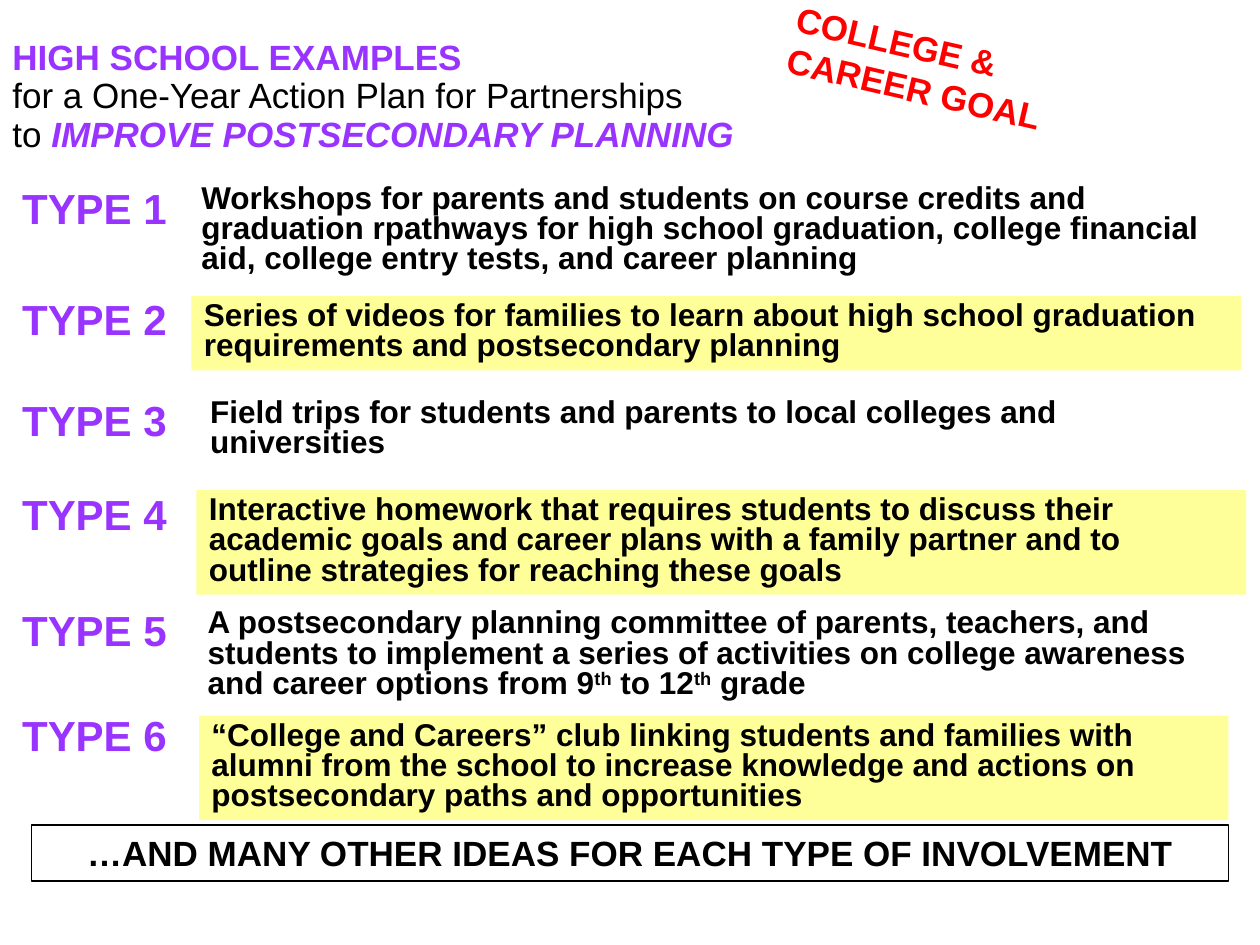
from dataclasses import dataclass
from typing import NamedTuple

from pptx import Presentation
from pptx.dml.color import RGBColor as RGB
from pptx.enum.shapes import MSO_SHAPE as Shape
from pptx.enum.text import MSO_ANCHOR as Anchor, PP_ALIGN as Align
from pptx.util import Inches, Pt


@dataclass(frozen=True)
class Theme:
    face: str = "Arial"
    ink: RGB = RGB(0, 0, 0)
    violet: RGB = RGB(0x99, 0x33, 0xFF)
    red: RGB = RGB(0xFF, 0, 0)
    yellow: RGB = RGB(0xFF, 0xFF, 0x99)
    head: int = 20
    label: int = 24
    body: int = 18


class Run(NamedTuple):
    text: str
    color: RGB
    bold: bool = True
    italic: bool = False
    raised: bool = False


class Box(NamedTuple):
    left: float
    top: float
    width: float
    height: float


class Row(NamedTuple):
    label_top: float
    box: Box
    marked: bool
    lines: list


THEME = Theme()
LEFT, CENTER = Align.LEFT, Align.CENTER


def ink(text: str, raised: bool = False) -> Run:
    return Run(text, THEME.ink, raised=raised)


TITLE = [
    [Run("HIGH SCHOOL EXAMPLES", THEME.violet)],
    [Run("for a One-Year Action Plan for Partnerships", THEME.ink, False)],
    [Run("to ", THEME.ink, False),
     Run("IMPROVE POSTSECONDARY PLANNING", THEME.violet, italic=True)],
]

ROWS = [
    Row(1.4, Box(1.5, 1.42, 8.33, 0.83), False, [[ink(
        "Workshops for parents and students on course credits and "
        "graduation rpathways for high school graduation, college "
        "financial aid, college entry tests, and career planning")]]),
    Row(2.28, Box(1.52, 2.35, 8.33, 0.59), True, [[ink(
        "Series of videos for families to learn about high school "
        "graduation requirements and postsecondary planning")]]),
    Row(3.08, Box(1.57, 3.12, 8.33, 0.59), False, [[ink(
        "Field trips for students and parents to local colleges and "
        "universities")]]),
    Row(3.83, Box(1.56, 3.89, 8.33, 0.83), True, [
        [ink("Interactive homework that requires students to discuss their "
             "academic goals and career plans with a family partner and to")],
        [ink("outline strategies for reaching these goals")]]),
    Row(4.75, Box(1.55, 4.79, 8.5, 0.83), False, [
        [ink("A postsecondary planning committee of parents, teachers, and "
             "students to implement a series of activities on college "
             "awareness")],
        [ink("and career options from 9"), ink("th", True),
         ink(" to 12"), ink("th", True), ink(" grade")]]),
    Row(5.58, Box(1.58, 5.68, 8.17, 0.83), True, [[ink(
        "“College and Careers” club linking students and families with "
        "alumni from the school to increase knowledge and actions on "
        "postsecondary paths and opportunities")]]),
]


def fill_text(shape, lines: list, size: int, align=LEFT, space=1.0) -> None:
    frame = shape.text_frame
    frame.word_wrap = True
    frame.vertical_anchor = Anchor.TOP
    for i, line in enumerate(lines):
        para = frame.add_paragraph() if i else frame.paragraphs[0]
        para.alignment = align
        para.line_spacing = space
        for part in line:
            run = para.add_run()
            run.text = part.text
            look = {"name": THEME.face, "size": Pt(size),
                    "bold": part.bold, "italic": part.italic}
            for key, value in look.items():
                setattr(run.font, key, value)
            run.font.color.rgb = part.color
            if part.raised:
                run._r.get_or_add_rPr().set("baseline", "30000")


def add_text(slide, box: Box, lines: list, size: int, **style):
    shape = slide.shapes.add_textbox(*map(Inches, box))
    fill_text(shape, lines, size, **style)
    return shape


def add_panel(slide, box: Box, lines: list, size: int, **style):
    """Draw a yellow rectangle, without outline, that holds text."""
    shape = slide.shapes.add_shape(Shape.RECTANGLE, *map(Inches, box))
    shape.shadow.inherit = False
    shape.fill.solid()
    shape.fill.fore_color.rgb = THEME.yellow
    shape.line.fill.background()
    fill_text(shape, lines, size, **style)
    return shape


def main() -> None:
    deck = Presentation()
    deck.slide_width, deck.slide_height = Inches(10), Inches(7.5)
    slide = deck.slides.add_slide(deck.slide_layouts[6])

    add_text(slide, Box(0, 0.26, 10, 1.02), TITLE, THEME.head, space=Pt(22))
    for num, row in enumerate(ROWS, 1):
        label = Run(f"TYPE {num}", THEME.violet)
        add_text(slide, Box(0, row.label_top, 1.5, 0.5), [[label]],
                 THEME.label, align=CENTER)
        draw = add_panel if row.marked else add_text
        draw(slide, row.box, row.lines, THEME.body, space=0.8)

    foot = add_panel(
        slide, Box(0.25, 6.55, 9.5, 0.44),
        [[ink("…AND MANY OTHER IDEAS FOR EACH TYPE OF INVOLVEMENT")]],
        THEME.head, align=CENTER)
    foot.fill.background()
    foot.line.color.rgb = THEME.ink
    foot.line.width = Pt(1)

    goal = add_text(slide, Box(6.16, 0.19, 2.58, 0.77),
                    [[Run("COLLEGE & CAREER GOAL", THEME.red)]], THEME.head)
    goal.rotation = 13
    deck.save("out.pptx")


if __name__ == "__main__":
    main()
